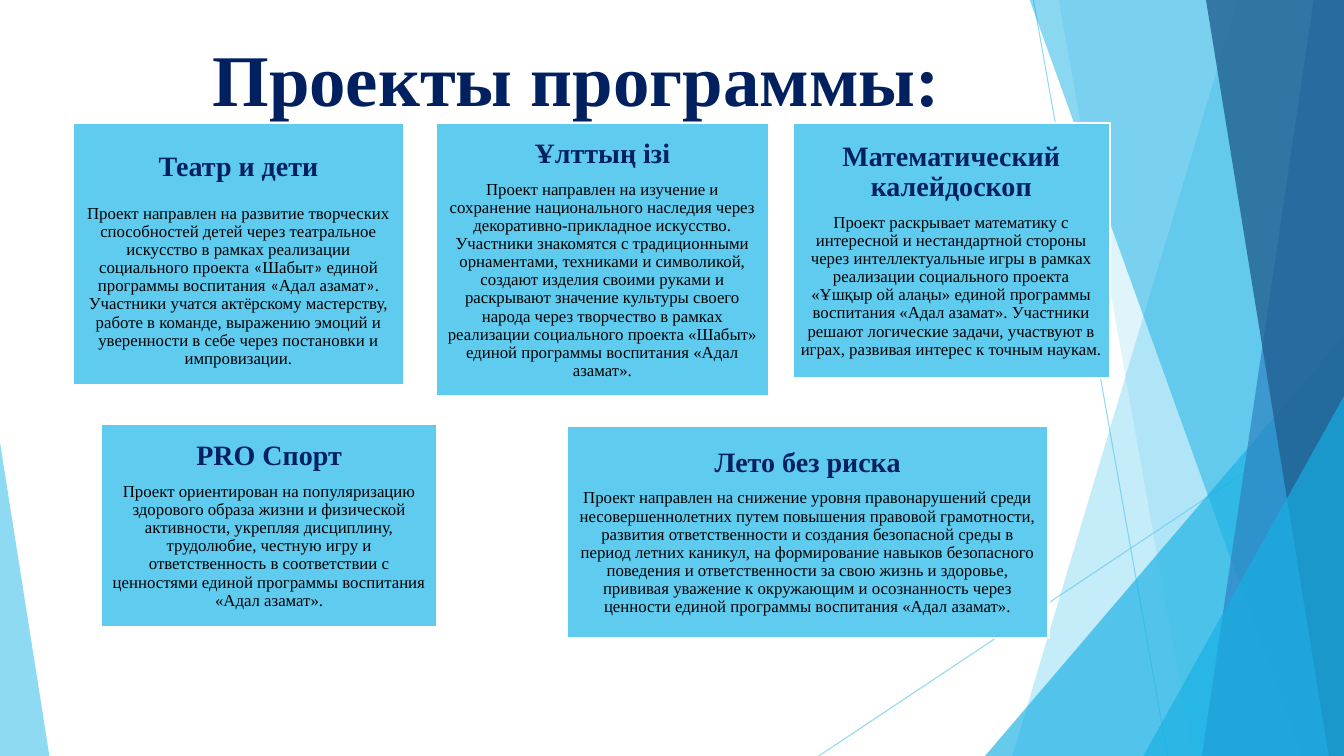
"""Build the slide that lists the projects of the school programme."""
from dataclasses import dataclass
from itertools import groupby

from lxml.etree import SubElement
from pptx import Presentation
from pptx.dml.color import RGBColor
from pptx.enum.shapes import MSO_CONNECTOR, MSO_SHAPE
from pptx.enum.text import MSO_ANCHOR, MSO_AUTO_SIZE, PP_ALIGN
from pptx.oxml.ns import qn
from pptx.util import Pt

PX = 9144


@dataclass(frozen=True)
class Theme:
    sky: str = "5FCBEF"
    cyan: str = "17B0E4"
    blue: str = "2E83C3"
    deep: str = "226292"
    navy: str = "002060"
    black: str = "000000"
    white: str = "FFFFFF"
    font: str = "Times New Roman"
    title: int = 52
    head: int = 20
    body: int = 12
    edge: float = 1.5
    hair: float = 0.75


THEME = Theme()


@dataclass(frozen=True)
class Ray:
    start: tuple[int, int]
    end: tuple[int, int]


@dataclass(frozen=True)
class Facet:
    points: tuple[tuple[int, int], ...]
    tint: str
    alpha: int


@dataclass(frozen=True)
class Wedge:
    box: tuple[int, int, int, int]
    peak: int
    tint: str
    alpha: int


@dataclass(frozen=True)
class Card:
    box: tuple[int, int, int, int]
    head: str
    body: str
    pad: int = 8
    drop: int = 0
    gap: int = 8
    quote: str = THEME.font


def strip(top: int, base: int) -> tuple[tuple[int, int], ...]:
    return (top, -1), (1333, -1), (1333, 750), (base, 750)


DECOR = [
    Ray((1025, 0), (1158, 750)),
    Ray((1333, 403), (812, 750)),
    Facet(strip(1228, 1004), THEME.sky, 36),
    Facet(strip(1050, 1183), THEME.sky, 20),
    Wedge((977, 333, 356, 417), 1, THEME.cyan, 66),
    Facet(strip(1021, 1291), THEME.cyan, 50),
    Facet(strip(1303, 1192), THEME.blue, 70),
    Facet(strip(1196, 1318), THEME.deep, 80),
    Wedge((1134, 393, 199, 357), 1, THEME.cyan, 66),
    Wedge((0, 439, 49, 311), 0, THEME.sky, 70),
]

CARDS = [
    Card((72, 122, 329, 260), "Театр и дети",
         "Проект направлен на развитие творческих способностей детей через "
         "театральное искусство в рамках реализации социального проекта «Шабыт» "
         "единой программы воспитания «Адал азамат». Участники учатся актёрскому "
         "мастерству, работе в команде, выражению эмоций и уверенности в себе "
         "через постановки и импровизации.",
         pad=13, drop=12, gap=16, quote="Calibri"),
    Card((432, 122, 331, 271), "Ұлттың ізі",
         "Проект направлен на изучение и сохранение национального наследия через "
         "декоративно-прикладное искусство. Участники знакомятся с традиционными "
         "орнаментами, техниками и символикой, создают изделия своими руками и "
         "раскрывают значение культуры своего народа через творчество в рамках "
         "реализации социального проекта «Шабыт» единой программы воспитания "
         "«Адал азамат»."),
    Card((786, 122, 315, 253), "Математический калейдоскоп",
         "Проект раскрывает математику с интересной и нестандартной стороны через "
         "интеллектуальные игры в рамках реализации социального проекта «Ұшқыр ой "
         "алаңы» единой программы воспитания «Адал азамат». Участники решают "
         "логические задачи, участвуют в играх, развивая интерес к точным наукам."),
    Card((100, 421, 334, 201), "PRO Спорт",
         "Проект ориентирован на популяризацию здорового образа жизни и физической "
         "активности, укрепляя дисциплину, трудолюбие, честную игру и "
         "ответственность в соответствии с ценностями единой программы воспитания "
         "«Адал азамат»."),
    Card((562, 423, 478, 210), "Лето без риска",
         "Проект направлен на снижение уровня правонарушений среди "
         "несовершеннолетних путем повышения правовой грамотности, развития "
         "ответственности и создания безопасной среды в период летних каникул, на "
         "формирование навыков безопасного поведения и ответственности за свою "
         "жизнь и здоровье, прививая уважение к окружающим и осознанность через "
         "ценности единой программы воспитания «Адал азамат»."),
]


def scale(box: tuple[int, ...]) -> list[int]:
    return [side * PX for side in box]


def fade(shape, alpha: int) -> None:
    for tint in shape.element.spPr.iter(qn("a:srgbClr")):
        SubElement(tint, qn("a:alpha")).set("val", str(alpha * 1000))


def paint(shape, tint: str) -> None:
    shape.shadow.inherit = False
    shape.fill.solid()
    shape.fill.fore_color.rgb = RGBColor.from_string(tint)


def style(font, size: int, tint: str, bold: bool, name: str = THEME.font) -> None:
    font.name, font.size, font.bold = name, Pt(size), bold
    font.color.rgb = RGBColor.from_string(tint)


def add_decor(slide, part: Ray | Facet | Wedge) -> None:
    if isinstance(part, Ray):
        line = slide.shapes.add_connector(
            MSO_CONNECTOR.STRAIGHT, *scale(part.start + part.end))
        line.line.width = Pt(THEME.hair)
        line.line.color.rgb = RGBColor.from_string(THEME.sky)
        fade(line, 70)
        SubElement(line.element.spPr, qn("a:effectLst"))
        return
    if isinstance(part, Facet):
        form = slide.shapes.build_freeform(*part.points[0], scale=PX)
        form.add_line_segments(part.points[1:], close=True)
        shape = form.convert_to_shape()
    else:
        shape = slide.shapes.add_shape(MSO_SHAPE.ISOSCELES_TRIANGLE, *scale(part.box))
        shape.adjustments[0] = part.peak
    paint(shape, part.tint)
    shape.line.fill.background()
    fade(shape, part.alpha)


def add_title(slide, text: str) -> None:
    title = slide.shapes.title
    title.left, title.top, title.width, title.height = scale((82, 28, 979, 90))
    frame = title.text_frame
    frame.text = text
    frame.auto_size = MSO_AUTO_SIZE.NONE
    frame.vertical_anchor = MSO_ANCHOR.TOP
    line = frame.paragraphs[0]
    line.alignment = PP_ALIGN.CENTER
    style(line.runs[0].font, THEME.title, THEME.navy, True)


def add_card(slide, card: Card) -> None:
    shape = slide.shapes.add_shape(MSO_SHAPE.RECTANGLE, *scale(card.box))
    paint(shape, THEME.sky)
    shape.line.color.rgb = RGBColor.from_string(THEME.white)
    shape.line.width = Pt(THEME.edge)
    frame = shape.text_frame
    frame.word_wrap = True
    frame.vertical_anchor = MSO_ANCHOR.MIDDLE
    frame.margin_left = frame.margin_right = frame.margin_bottom = card.pad * PX
    frame.margin_top = (card.pad + card.drop) * PX
    frame.text = card.head
    head, body = frame.paragraphs[0], frame.add_paragraph()
    for line, gap in ((head, card.gap), (body, 5)):
        line.alignment = PP_ALIGN.CENTER
        line.line_spacing = 0.9
        line.space_after = Pt(gap)
    style(head.runs[0].font, THEME.head, THEME.navy, True)
    for mark, group in groupby(card.body, lambda sign: sign in "«»"):
        run = body.add_run()
        run.text = "".join(group)
        style(run.font, THEME.body, THEME.black, False,
              card.quote if mark else THEME.font)


def main() -> None:
    deck = Presentation()
    deck.slide_width, deck.slide_height = scale((1333, 750))
    slide = deck.slides.add_slide(deck.slide_layouts[5])
    for part in DECOR:
        add_decor(slide, part)
    add_title(slide, "Проекты программы:")
    for card in CARDS:
        add_card(slide, card)
    deck.save("out.pptx")


if __name__ == "__main__":
    main()
